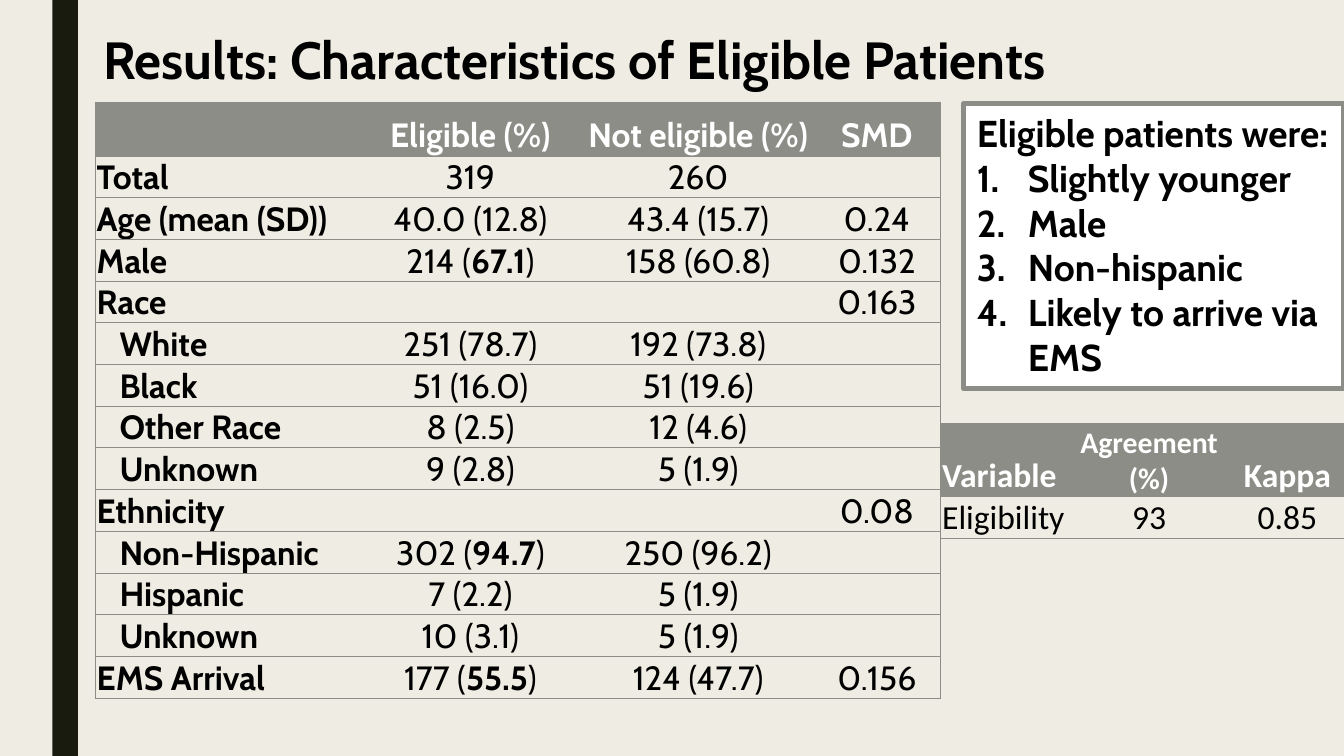
from lxml.etree import SubElement
from pptx import Presentation
from pptx.dml.color import RGBColor
from pptx.enum.shapes import MSO_SHAPE
from pptx.enum.text import MSO_ANCHOR, PP_ALIGN
from pptx.oxml.ns import qn
from pptx.util import Inches, Pt

SLIDE_W = Inches(10)
SLIDE_H = SLIDE_W * 9 // 16

CREAM = RGBColor(0xEF, 0xED, 0xE3)
DARK = RGBColor(0x19, 0x1B, 0x0E)
GRAY = RGBColor(0x8C, 0x8D, 0x86)
WHITE = RGBColor(0xFF, 0xFF, 0xFF)
BLACK = RGBColor(0x00, 0x00, 0x00)

NO_STYLE = "{2D5ABB26-0587-4C30-8999-92F81FD0307C}"
HEADER_H, BODY_H = 7.12, 5.46

# Asterisks enclose bold figures; a leading ">" indents a label.
PATIENTS = [
    ["", "Eligible (%)", "Not eligible (%)", "SMD"],
    ["Total", "319", "260", ""],
    ["Age (mean (SD))", "40.0 (12.8)", "43.4 (15.7)", "0.24"],
    ["Male", "214 (*67.1*)", "158 (60.8)", "0.132"],
    ["Race", "", "", "0.163"],
    [">White", "251 (78.7)", "192 (73.8)", ""],
    [">Black", "51 (16.0)", "51 (19.6)", ""],
    [">Other Race", "8 (2.5)", "12 (4.6)", ""],
    [">Unknown", "9 (2.8)", "5 (1.9)", ""],
    ["Ethnicity", "", "", "0.08"],
    [">Non-Hispanic", "302 (*94.7*)", "250 (96.2)", ""],
    [">Hispanic", "7 (2.2)", "5 (1.9)", ""],
    [">Unknown", "10 (3.1)", "5 (1.9)", ""],
    ["EMS Arrival", "177 (*55.5*)", "124 (47.7)", "0.156"],
]
AGREEMENT = [
    ["Variable", "Agreement (%)", "Kappa"],
    ["Eligibility", "93", "0.85"],
]
FINDINGS = ["Slightly younger", "Male", "Non-hispanic", "Likely to arrive via EMS"]


def across(percent):
    return round(SLIDE_W * percent / 100)


def down(percent):
    return round(SLIDE_H * percent / 100)


def frame(left, top, width, height):
    """Turn percentages of the slide into a position and size."""
    return across(left), down(top), across(width), down(height)


def add_run(p, text, size, color=BLACK, bold=True, font="Cabin"):
    r = p.add_run()
    r.text = text
    r.font.name = font
    r.font.size = Pt(size)
    r.font.bold = bold
    r.font.color.rgb = color


def add_rect(s, box, fill, line=None):
    sp = s.shapes.add_shape(MSO_SHAPE.RECTANGLE, *box)
    sp.shadow.inherit = False
    sp.fill.solid()
    sp.fill.fore_color.rgb = fill
    if line is None:
        sp.line.fill.background()
    else:
        sp.line.color.rgb = line
        sp.line.width = Pt(2.75)
    return sp


def add_title(s, text):
    tf = s.shapes.add_textbox(*frame(6.7, 2.67, 79.5, 10.14)).text_frame
    tf.word_wrap = True
    add_run(tf.paragraphs[0], text, 28)


def number_paragraph(p):
    pPr = p._p.get_or_add_pPr()
    pPr.set("marL", str(Inches(0.38)))
    pPr.set("indent", str(-Inches(0.38)))
    SubElement(pPr, qn("a:buFont"), typeface="+mj-lt")
    SubElement(pPr, qn("a:buAutoNum"), type="arabicPeriod")


def add_findings(s, heading, findings):
    tf = add_rect(s, frame(71.7, 13.7, 28.3, 37.72), WHITE, GRAY).text_frame
    tf.word_wrap = True
    tf.vertical_anchor = MSO_ANCHOR.TOP
    p = tf.paragraphs[0]
    p.alignment = PP_ALIGN.LEFT
    add_run(p, heading, 20)
    for finding in findings:
        p = tf.add_paragraph()
        p.alignment = PP_ALIGN.LEFT
        number_paragraph(p)
        add_run(p, finding, 20)


def add_borders(cell, sides):
    tcPr = cell._tc.get_or_add_tcPr()
    for side in sides:
        ln = SubElement(tcPr, qn(f"a:ln{side}"), w=str(Pt(0.5)))
        fill = SubElement(ln, qn("a:solidFill"))
        SubElement(fill, qn("a:srgbClr"), val=str(GRAY))


def fill_cell(cell, text, header, label, bold, font, size):
    cell.margin_left = Inches(0.18 if text.startswith(">") else 0.01)
    cell.margin_right = cell.margin_top = Inches(0.01)
    cell.margin_bottom = 0
    cell.vertical_anchor = MSO_ANCHOR.BOTTOM
    if header:
        cell.fill.solid()
        cell.fill.fore_color.rgb = GRAY
    else:
        cell.fill.background()
    p = cell.text_frame.paragraphs[0]
    p.alignment = PP_ALIGN.LEFT if label else PP_ALIGN.CENTER
    for i, part in enumerate(text.lstrip(">").split("*")):
        if part:
            add_run(p, part, size, WHITE if header else BLACK, bold or i % 2 == 1, font)


def add_grid(s, left, top, widths, header_h, rows, font, bold_labels, small=()):
    """Add a ruled table; texts listed in small are set at 16 points."""
    height = header_h + BODY_H * (len(rows) - 1)
    box = frame(left, top, sum(widths), height)
    tbl = s.shapes.add_table(len(rows), len(widths), *box).table
    tbl.horz_banding = False
    tbl._tbl.tblPr.find(qn("a:tableStyleId")).text = NO_STYLE
    for column, width in zip(tbl.columns, widths):
        column.width = across(width)
    for i, texts in enumerate(rows):
        header = i == 0
        tbl.rows[i].height = down(header_h if header else BODY_H)
        for j, text in enumerate(texts):
            cell = tbl.cell(i, j)
            last = j == len(texts) - 1
            add_borders(cell, "L" * (j == 0) + "R" * last + "TB")
            bold = header or (bold_labels and j == 0)
            size = 16 if text in small else 18
            fill_cell(cell, text, header, j == 0, bold, font, size)


def main():
    prs = Presentation()
    prs.slide_width, prs.slide_height = SLIDE_W, SLIDE_H
    s = prs.slides.add_slide(prs.slide_layouts[6])
    s.background.fill.solid()
    s.background.fill.fore_color.rgb = CREAM

    add_rect(s, frame(3.9, 0, 1.9, 100), DARK)
    add_title(s, "Results: Characteristics of Eligible Patients")
    add_grid(s, 7.1, 13.52, [19.5, 16.8, 17.1, 9.5], HEADER_H, PATIENTS, "Cabin", True)
    add_findings(s, "Eligible patients were:", FINDINGS)
    add_grid(s, 70, 56, [9.8, 11.4, 9.2], 9.7, AGREEMENT, "Calibri", False,
             small=["Agreement (%)"])
    prs.save("out.pptx")


if __name__ == "__main__":
    main()
